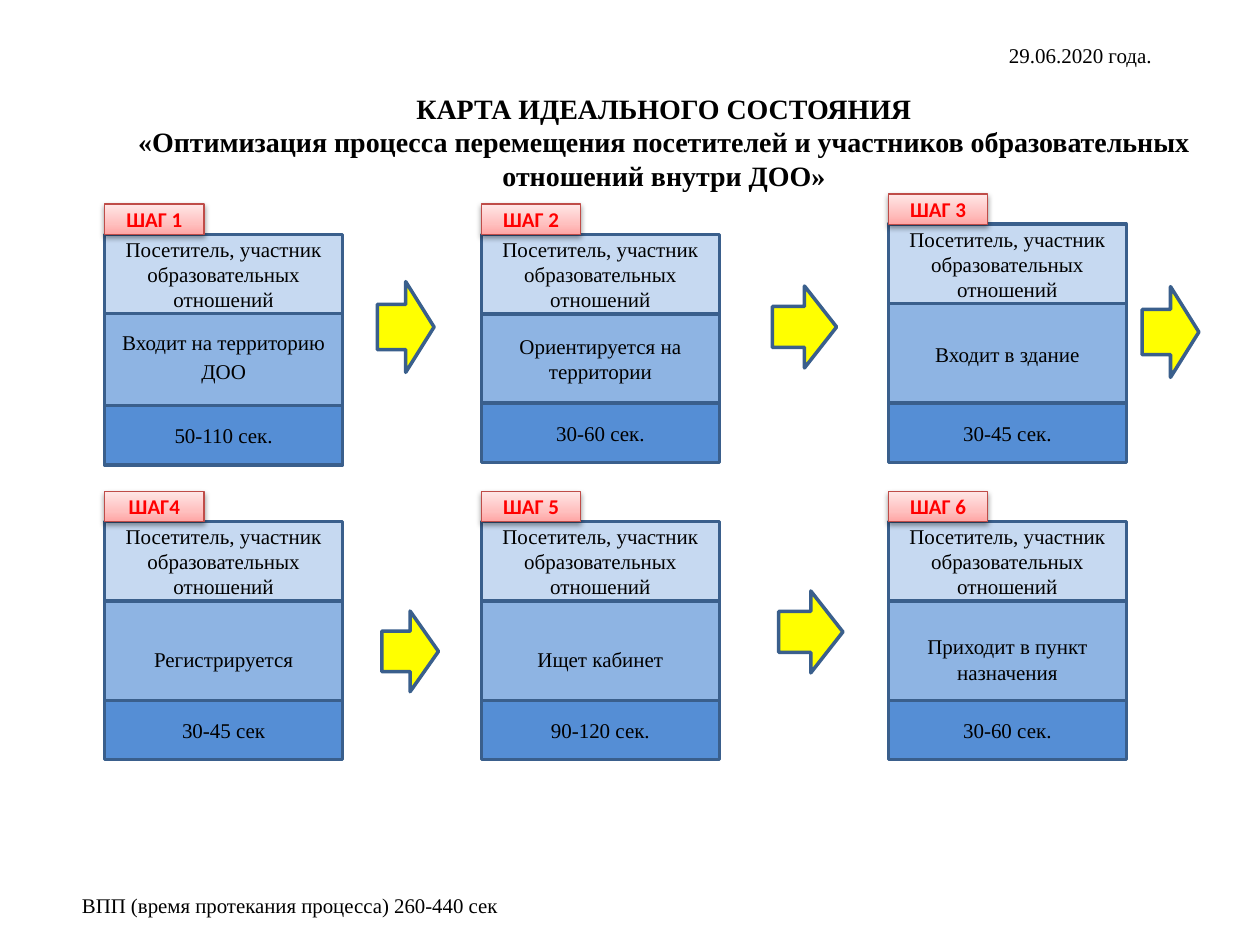
from copy import deepcopy
from dataclasses import dataclass

from lxml.etree import SubElement
from pptx import Presentation
from pptx.dml.color import RGBColor
from pptx.enum.shapes import MSO_SHAPE as Shape
from pptx.enum.text import MSO_ANCHOR as Anchor, MSO_AUTO_SIZE as AutoSize, PP_ALIGN as Align
from pptx.oxml.ns import qn
from pptx.util import Inches, Pt


@dataclass(frozen=True)
class Theme:
    serif: str = "Times New Roman"
    sans: str = "Calibri"
    ink: str = "000000"
    role: str = "C6D9F1"
    action: str = "8EB4E3"
    duration: str = "558ED5"
    outline: str = "3A5F8C"
    arrow: str = "FFFF00"
    tag_text: str = "FF0000"
    tag_line: str = "BF4C48"
    tag_stops: tuple = ((0, "FFA6A5"), (0.35, "FFC0BF"), (1, "FFE7E7"))
    title_size: float = 16
    text_size: float = 12
    footer_size: float = 11.9


@dataclass(frozen=True)
class Box:
    left: float
    top: float
    width: float
    height: float

    def frame(self):
        return [Inches(side) for side in (self.left, self.top, self.width, self.height)]


@dataclass(frozen=True)
class Step:
    label: str
    action: str
    duration: str
    box: Box
    action_top: float
    action_height: float
    duration_top: float
    spacing: float = 1.0


THEME = Theme()
ROLE = "Посетитель, участник образовательных отношений"
TITLE = (
    "КАРТА ИДЕАЛЬНОГО СОСТОЯНИЯ",
    "«Оптимизация процесса перемещения посетителей и участников образовательных отношений внутри ДОО»",
)
COLUMNS = (0.83, 3.82, 7.05)
STEP_WIDTH = 1.89
ROLE_HEIGHT = 0.63
DURATION_HEIGHT = 0.47
TAG_WIDTH, TAG_HEIGHT = 0.79, 0.24


def step_box(column, top, height):
    return Box(COLUMNS[column], top, STEP_WIDTH, height)


STEPS = (
    Step("ШАГ 1", "Входит на территорию ДОО", "50-110 сек.", step_box(0, 1.86, 1.83), 0.55, 0.81, 1.36, 1.15),
    Step("ШАГ 2", "Ориентируется на территории", "30-60 сек.", step_box(1, 1.86, 1.81), 0.63, 0.71, 1.34),
    Step("ШАГ 3", "Входит в здание", "30-45 сек.", step_box(2, 1.78, 1.89), 0.55, 0.96, 1.42),
    Step("ШАГ4", "Регистрируется", "30-45 сек", step_box(0, 4.14, 1.89), 0.63, 0.92, 1.42),
    Step("ШАГ 5", "Ищет кабинет", "90-120 сек.", step_box(1, 4.14, 1.89), 0.63, 0.92, 1.42),
    Step("ШАГ 6", "Приходит в пункт назначения", "30-60 сек.", step_box(2, 4.14, 1.89), 0.63, 0.92, 1.42),
)
ARROWS = (
    (Shape.DOWN_ARROW, Box(2.86, 2.37, 0.72, 0.45), 270),
    (Shape.RIGHT_ARROW, Box(6.13, 2.27, 0.51, 0.65), 0),
    (Shape.DOWN_ARROW, Box(8.93, 2.41, 0.72, 0.45), 270),
    (Shape.RIGHT_ARROW, Box(3.03, 4.85, 0.45, 0.64), 0),
    (Shape.RIGHT_ARROW, Box(6.18, 4.69, 0.51, 0.65), 0),
)


def apply(target, **values):
    for name, value in values.items():
        setattr(target, name, value)


def write(para, lines, size=THEME.text_size, color=THEME.ink, font=THEME.serif, bold=False):
    for index, line in enumerate(lines):
        if index:
            para.add_line_break()
        span = para.add_run()
        span.text = line
        apply(span.font, size=Pt(size), name=font, bold=bold)
        span.font.color.rgb = RGBColor.from_string(color)


def add_shape(page, kind, box, fill=None, line=THEME.outline, weight=2):
    shape = page.shapes.add_shape(kind, *box.frame())
    shape.shadow.inherit = False
    if fill:
        shape.fill.solid()
        shape.fill.fore_color.rgb = RGBColor.from_string(fill)
    shape.line.color.rgb = RGBColor.from_string(line)
    shape.line.width = Pt(weight)
    return shape


def write_centred(shape, text, spacing=1.0, **style):
    apply(shape.text_frame, word_wrap=True, vertical_anchor=Anchor.MIDDLE)
    para = shape.text_frame.paragraphs[0]
    apply(para, alignment=Align.CENTER, line_spacing=spacing)
    write(para, [text], **style)


def add_tag(page, box, label):
    tag = add_shape(page, Shape.RECTANGLE, box, line=THEME.tag_line, weight=0.75)
    tag.fill.gradient()
    tag.fill.gradient_angle = 90
    stop_list = tag._element.spPr.find(qn("a:gradFill")).find(qn("a:gsLst"))
    stop_list.insert(1, deepcopy(stop_list[0]))
    for stop, (position, color) in zip(tag.fill.gradient_stops, THEME.tag_stops):
        stop.position = position
        stop.color.rgb = RGBColor.from_string(color)
    effects = tag._element.spPr.find(qn("a:effectLst"))
    shadow = SubElement(effects, qn("a:outerShdw"), blurRad=str(Pt(3.1)),
                        dist=str(Pt(1.6)), dir="5400000", rotWithShape="0")
    shade = SubElement(shadow, qn("a:srgbClr"), val=THEME.ink)
    SubElement(shade, qn("a:alpha"), val="38000")
    write_centred(tag, label, color=THEME.tag_text, font=THEME.sans, bold=True)


def add_step(page, step):
    box = step.box
    bands = (
        (step.action_top, step.action_height, THEME.action, step.action, step.spacing),
        (step.duration_top, DURATION_HEIGHT, THEME.duration, step.duration, 1.0),
        (0, ROLE_HEIGHT, THEME.role, ROLE, 1.0),
    )
    for offset, height, fill, text, spacing in bands:
        band = Box(box.left, box.top + offset, box.width, height)
        write_centred(add_shape(page, Shape.RECTANGLE, band, fill), text, spacing)
    add_tag(page, Box(box.left, box.top - TAG_HEIGHT, TAG_WIDTH, TAG_HEIGHT), step.label)


def place_text(holder, box, lines, align, **style):
    left, top, width, height = box.frame()
    apply(holder, left=left, top=top, width=width, height=height)
    apply(holder.text_frame, word_wrap=True, auto_size=AutoSize.NONE, vertical_anchor=Anchor.MIDDLE)
    para = holder.text_frame.paragraphs[0]
    para.alignment = align
    write(para, lines, **style)
    return para


def add_footer(holder, box):
    para = place_text(holder, box, ["ВПП (время протекания процесса) 260-440 сек"],
                      Align.LEFT, size=THEME.footer_size)
    para.space_before = Pt(0)
    properties = para._p.get_or_add_pPr()
    properties.set("marL", "0")
    properties.set("indent", "0")
    SubElement(properties, qn("a:buNone"))


def add_date(page, box):
    date = page.shapes.add_textbox(*box.frame())
    date.text_frame.word_wrap = True
    write(date.text_frame.paragraphs[0], ["29.06.2020 года."])


def main():
    deck = Presentation()
    apply(deck, slide_width=Inches(10), slide_height=Inches(7.5))
    page = deck.slides.add_slide(deck.slide_layouts[1])
    place_text(page.shapes.title, Box(0.68, 0.6, 9.18, 1.05), TITLE, Align.CENTER,
               size=THEME.title_size, bold=True)
    add_footer(page.placeholders[1], Box(0.55, 7, 9, 0.36))
    add_date(page, Box(7.91, 0.29, 1.5, 0.3))
    for step in STEPS:
        add_step(page, step)
    for kind, box, rotation in ARROWS:
        add_shape(page, kind, box, THEME.arrow).rotation = rotation
    deck.save("out.pptx")


if __name__ == "__main__":
    main()
